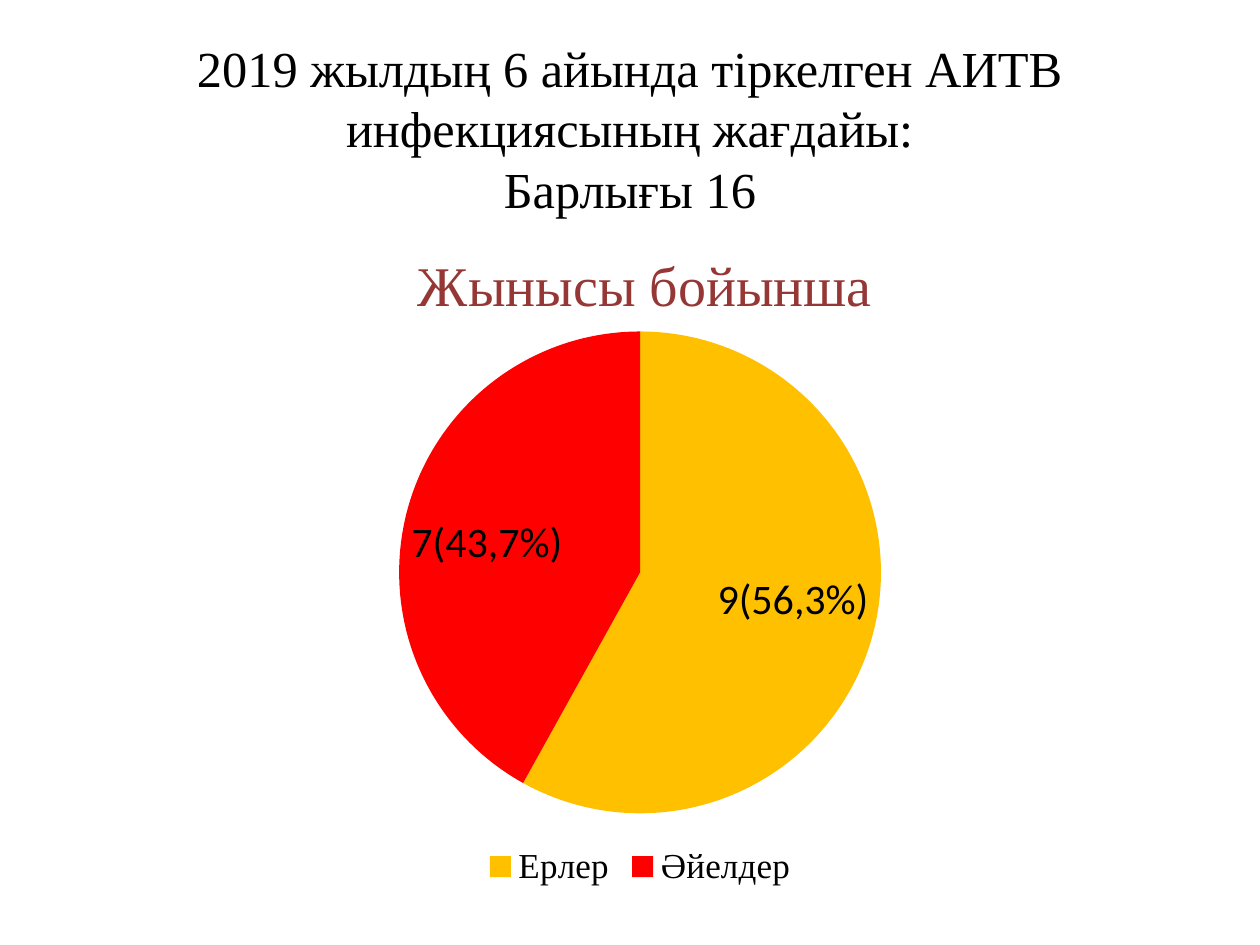
import pptx
import pptx.chart.data
import pptx.dml.color
import pptx.enum.chart
import pptx.enum.text
import pptx.util

Pt = pptx.util.Pt
SERIF = "Times New Roman"


def color(value):
    return pptx.dml.color.RGBColor.from_string(value)


def style(font, size, name, value):
    for key, setting in {"size": Pt(size), "name": name, "bold": False}.items():
        setattr(font, key, setting)
    font.color.rgb = color(value)


deck = pptx.Presentation()
deck.slide_width, deck.slide_height = Pt(720), Pt(540)
slide = deck.slides.add_slide(deck.slide_layouts[6])

headings = [
    ("2019 жылдың 6 айында тіркелген АИТВ инфекциясының жағдайы:\vБарлығы 16",
     (54, 15, 612, 116), 28.8, "000000",
     pptx.enum.text.MSO_ANCHOR.MIDDLE, 0),
    ("Жынысы бойынша",
     (88, 139.5, 561.5, 317.5), 32, "953735",
     pptx.enum.text.MSO_ANCHOR.TOP, 3),
]
for wording, place, size, ink, anchor, gap in headings:
    frame = slide.shapes.add_textbox(*map(Pt, place)).text_frame
    frame.word_wrap = True
    frame.vertical_anchor = anchor
    heading = frame.paragraphs[0]
    heading.text = wording
    heading.alignment = pptx.enum.text.PP_ALIGN.CENTER
    heading.space_before = Pt(gap)
    for run in heading.runs:
        style(run.font, size, SERIF, ink)

cases = pptx.chart.data.CategoryChartData()
cases.categories = ["Ерлер", "Әйелдер"]
cases.add_series("Series 1", [18, 13])
by_sex = slide.shapes.add_chart(
    pptx.enum.chart.XL_CHART_TYPE.PIE,
    Pt(65.25), Pt(179.5), Pt(601), Pt(331), cases,
).chart
style(by_sex.font, 18, "Calibri", "000000")
by_sex.has_title = False
by_sex.has_legend = True
legend_format = {
    "position": pptx.enum.chart.XL_LEGEND_POSITION.BOTTOM,
    "include_in_layout": False,
}
for key, setting in legend_format.items():
    setattr(by_sex.legend, key, setting)
style(by_sex.legend.font, 20, SERIF, "000000")

pie = by_sex.plots[0]
pie.vary_by_categories = True
sexes = pie.series[0]
sexes.data_labels.show_value = True
style(sexes.data_labels.font, 32, "Calibri", "000000")
for index, (fill, share) in enumerate([("FFC000", "9(56,3%)"), ("FF0000", "7(43,7%)")]):
    point = sexes.points[index]
    point.format.fill.solid()
    point.format.fill.fore_color.rgb = color(fill)
    label = point.data_label
    label.text_frame.text = share
    style(label.text_frame.paragraphs[0].runs[0].font, 24, "Calibri", "000000")
    label.position = pptx.enum.chart.XL_LABEL_POSITION.BEST_FIT

deck.save("out.pptx")
